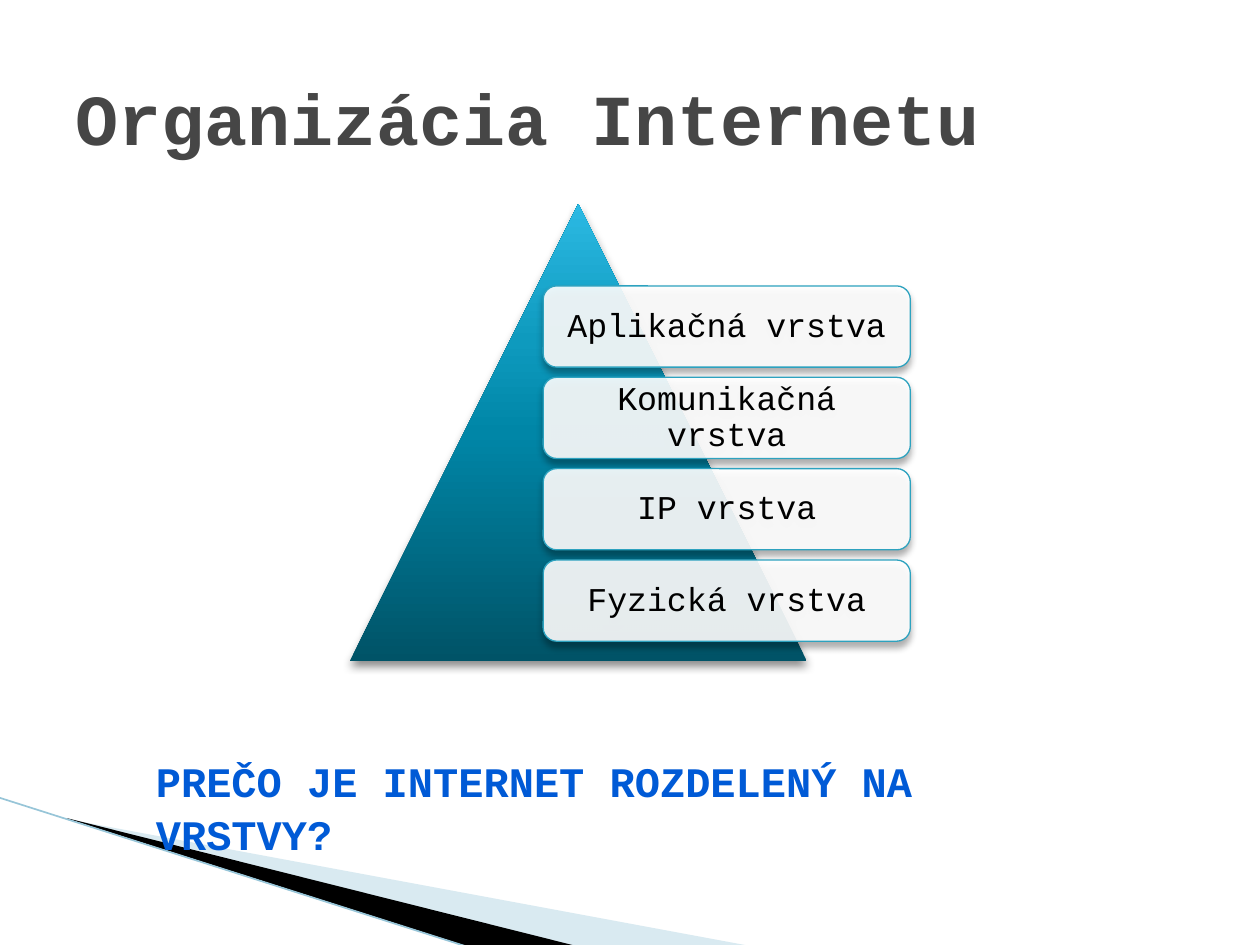
from dataclasses import dataclass

from pptx import Presentation
from pptx.dml.color import RGBColor
from pptx.enum.shapes import MSO_CONNECTOR, MSO_SHAPE
from pptx.enum.text import MSO_ANCHOR, PP_ALIGN
from pptx.oxml.ns import qn
from pptx.util import Pt
from lxml.etree import SubElement


@dataclass(frozen=True)
class Theme:
    font: str = "Courier New"
    title: str = "464646"
    ask: str = "005AD6"
    ink: str = "000000"
    card: str = "FFFFFF"
    edge: str = "2DA2BF"
    pale: str = "A0CBDC"
    line: str = "97C5D8"
    ramp: tuple = ((0, "005367"), (50, "0086A7"), (70, "0E9ABE"), (100, "2CB9E3"))
    big: float = 41
    mid: float = 24
    small: float = 19


class Painter:
    """Draws styled elements on one slide, with lengths in points."""

    def __init__(self, slide, theme):
        self.shapes = slide.shapes
        self.theme = theme

    def tint(self, shape, color, alpha=100):
        shape.fill.solid()
        shape.fill.fore_color.rgb = RGBColor.from_string(color)
        if alpha < 100:
            node = shape._element.spPr.find(qn("a:solidFill"))[0]
            SubElement(node, qn("a:alpha"), val=str(alpha * 1000))

    def shade(self, shape, alpha, blur):
        shape.shadow.inherit = False
        effects = shape._element.spPr.find(qn("a:effectLst"))
        outer = SubElement(effects, qn("a:outerShdw"), blurRad=str(Pt(blur)),
                           dist=str(Pt(3)), dir="5400000", rotWithShape="0")
        color = SubElement(outer, qn("a:srgbClr"), val=self.theme.ink)
        SubElement(color, qn("a:alpha"), val=str(alpha * 1000))

    def letter(self, frame, text, size, color, bold=False):
        frame.word_wrap = True
        para = frame.paragraphs[0]
        para.text = text
        font = para.font
        font.name, font.size, font.bold = self.theme.font, Pt(size), bold
        font.color.rgb = RGBColor.from_string(color)
        return para

    def label(self, box, text, size, color, anchor=MSO_ANCHOR.TOP):
        frame = self.shapes.add_textbox(*map(Pt, box)).text_frame
        frame.vertical_anchor = anchor
        return self.letter(frame, text, size, color, True)

    def wedge(self, points, color, alpha=100):
        start, *rest = [(Pt(x), Pt(y)) for x, y in points]
        outline = self.shapes.build_freeform(*start)
        outline.add_line_segments(rest, close=True)
        shape = outline.convert_to_shape()
        shape.shadow.inherit = False
        self.tint(shape, color, alpha)
        shape.line.fill.background()

    def rule(self, ends, color, width):
        line = self.shapes.add_connector(MSO_CONNECTOR.STRAIGHT, *map(Pt, ends))
        line.line.color.rgb = RGBColor.from_string(color)
        line.line.width = Pt(width)
        SubElement(line._element.spPr, qn("a:effectLst"))

    def peak(self, box):
        shape = self.shapes.add_shape(MSO_SHAPE.ISOSCELES_TRIANGLE, *map(Pt, box))
        shape.fill.gradient()
        shape.fill.gradient_angle = 90
        stops = shape._element.spPr.find(qn("a:gradFill")).find(qn("a:gsLst"))
        stops.clear()
        for pos, color in self.theme.ramp:
            stop = SubElement(stops, qn("a:gs"), pos=str(pos * 1000))
            SubElement(stop, qn("a:srgbClr"), val=color)
        shape.line.fill.background()
        self.shade(shape, 45, 5)

    def card(self, box, text):
        shape = self.shapes.add_shape(MSO_SHAPE.ROUNDED_RECTANGLE, *map(Pt, box))
        self.tint(shape, self.theme.card, 90)
        shape.line.color.rgb = RGBColor.from_string(self.theme.edge)
        shape.line.width = Pt(0.75)
        self.shade(shape, 35, 4)
        frame = shape.text_frame
        frame.margin_left = frame.margin_right = Pt(8)
        frame.margin_top = frame.margin_bottom = Pt(0)
        frame.vertical_anchor = MSO_ANCHOR.MIDDLE
        para = self.letter(frame, text, self.theme.small, self.theme.ink)
        para.alignment = PP_ALIGN.CENTER
        para.line_spacing = 0.9


def main():
    deck = Presentation()
    deck.slide_width, deck.slide_height = Pt(720), Pt(540)
    theme = Theme()
    art = Painter(deck.slides.add_slide(deck.slide_layouts[6]), theme)

    art.wedge([(39.6, 468.3), (428.5, 540.5), (328.5, 540.5)], theme.pale, 40)
    art.wedge([(38.2, 467.5), (329, 540.5), (268, 541), (39, 468)], theme.ink)
    art.rule((-0.5, 455.8, 267, 541), theme.line, 0.95)

    art.label((36, 21.6, 648, 90), "Organizácia Internetu",
              theme.big, theme.title, MSO_ANCHOR.MIDDLE)
    ask = art.label((82, 427, 556, 64), "PREČO JE INTERNET ROZDELENÝ NA VRSTVY?",
                    theme.mid, theme.ask)
    ask.line_spacing = 1.05

    art.peak((200, 116.6, 261, 261))
    layers = ("Aplikačná vrstva", "Komunikačná vrstva", "IP vrstva", "Fyzická vrstva")
    for row, name in enumerate(layers):
        art.card((310.4, 163.4 + row * 52.2, 209.8, 46.4), name)

    deck.save("out.pptx")


if __name__ == "__main__":
    main()
